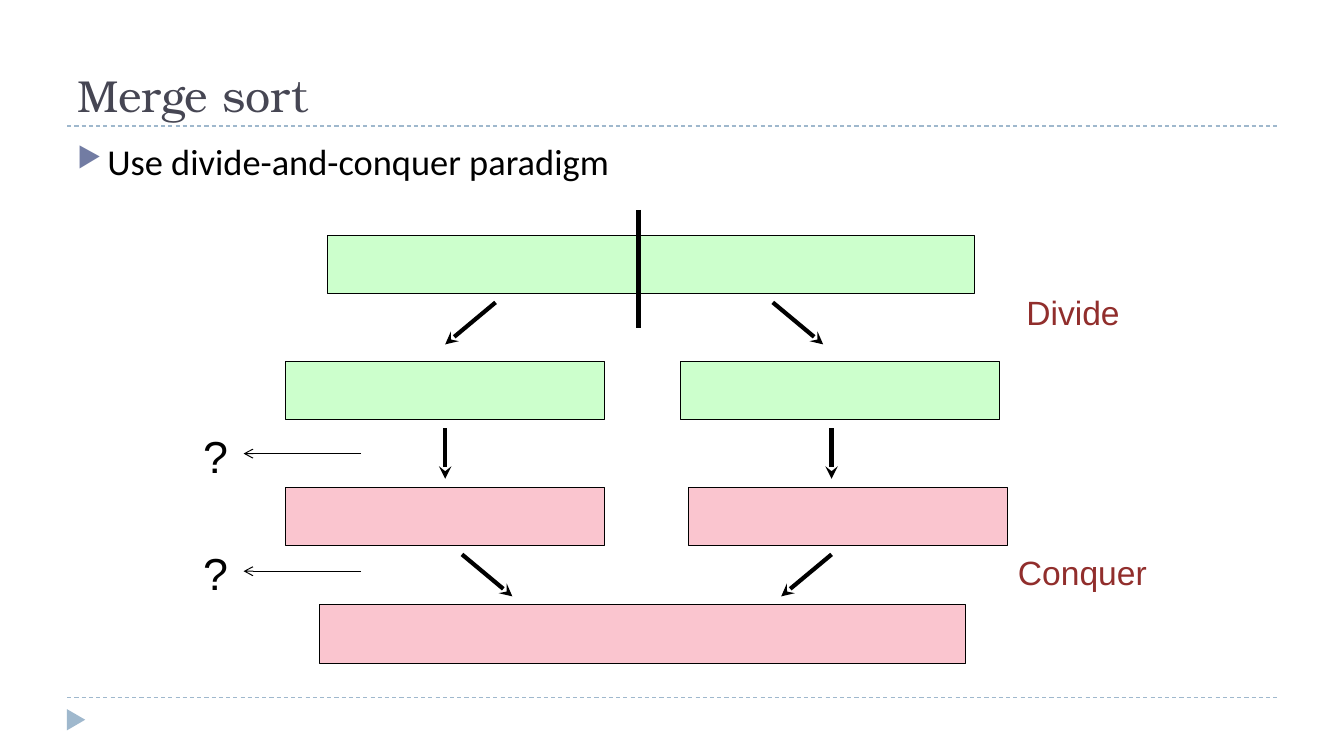
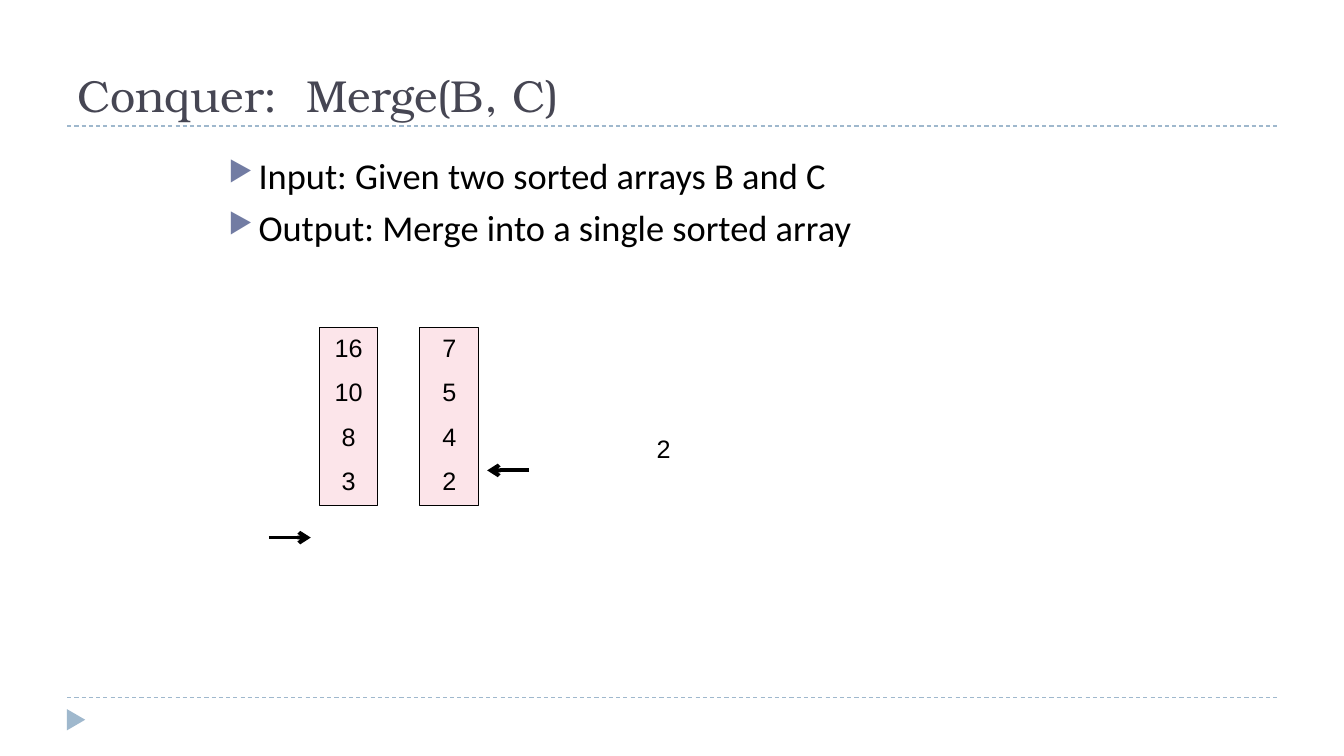
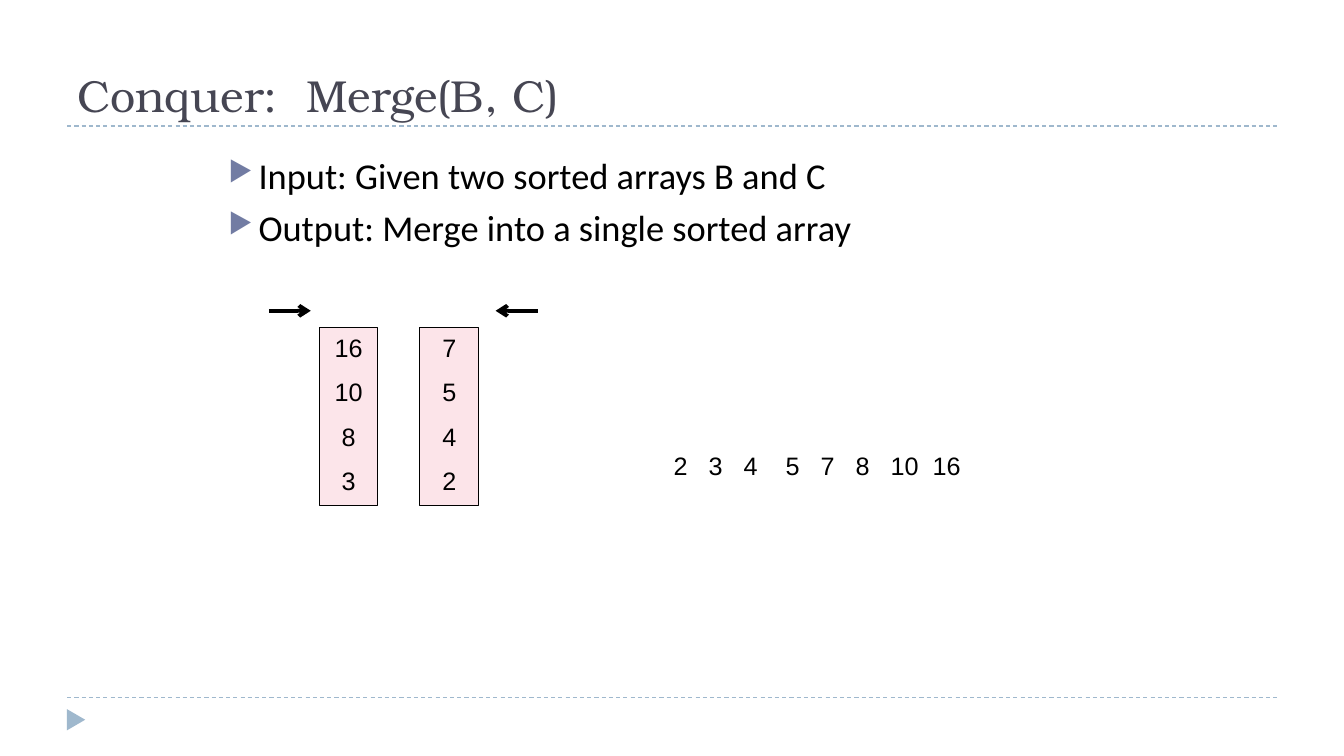
"""Build three slides that explain merge sort."""
import pptx
import pptx.dml.color
import pptx.enum.dml
import pptx.enum.shapes
import pptx.enum.text
import pptx.oxml
import pptx.oxml.ns
import pptx.util

Pt = pptx.util.Pt
RGBColor = pptx.dml.color.RGBColor
MSO_SHAPE = pptx.enum.shapes.MSO_SHAPE
PP_ALIGN = pptx.enum.text.PP_ALIGN
MSO_ANCHOR = pptx.enum.text.MSO_ANCHOR

BLACK = RGBColor(0x00, 0x00, 0x00)
SLATE = RGBColor(0x46, 0x46, 0x53)
RULE_BLUE = RGBColor(0x9F, 0xB8, 0xCD)
BULLET_BLUE = RGBColor(0x72, 0x7C, 0xA3)
GREEN = RGBColor(0xCC, 0xFF, 0xCC)
PINK = RGBColor(0xFA, 0xC5, 0xCF)
DARK_RED = RGBColor(0x91, 0x2E, 0x2C)

TITLE_FONT = {"name": "TeX Gyre Bonum", "size": Pt(32)}
BODY_FONT = {"name": "Calibri", "size": Pt(26)}
STEP_FONT = {"name": "Arial", "size": Pt(24)}
QUESTION_FONT = {"name": "Arial", "size": Pt(32)}
NUMBER_FONT = {"name": "Arial", "size": Pt(18)}

HALF_WIDTH = 228
FULL_WIDTH = 462
BAR_HEIGHT = 42
ARRAY_SIZE = (42, 127.4)
MERGED_STOPS = (25, 50, 80, 105, 130, 155, 185)


def set_values(target, values):
    for name, value in values.items():
        setattr(target, name, value)


def append_xml(parent, tag, attributes="", content=""):
    namespace = pptx.oxml.ns.nsdecls("a")
    parent.append(pptx.oxml.parse_xml(
        f"<a:{tag} {namespace} {attributes}>{content}</a:{tag}>"))


def write_lines(frame, lines, font, color=BLACK, **paragraph_format):
    frame.word_wrap = True
    for index, line in enumerate(lines):
        para = frame.paragraphs[0] if index == 0 else frame.add_paragraph()
        set_values(para, paragraph_format)
        span = para.add_run()
        span.text = line
        set_values(span.font, font)
        span.font.color.rgb = color


def add_text(page, area, lines, font, color=BLACK, **paragraph_format):
    box = page.shapes.add_textbox(*map(Pt, area))
    write_lines(box.text_frame, lines, font, color, **paragraph_format)
    return box


def add_bullets(page, area, lines):
    box = add_text(page, area, lines, BODY_FONT, space_before=Pt(6))
    indent = Pt(21.6)
    for para in box.text_frame.paragraphs:
        properties = para._p.get_or_add_pPr()
        properties.set("marL", str(indent))
        properties.set("indent", str(-indent))
        append_xml(properties, "buClr", content=f'<a:srgbClr val="{BULLET_BLUE}"/>')
        append_xml(properties, "buSzPct", 'val="76000"')
        append_xml(properties, "buChar", 'char="▶"')


def add_shape(page, kind, area, fill, outlined=True):
    shape = page.shapes.add_shape(kind, *map(Pt, area))
    shape.shadow.inherit = False
    shape.fill.solid()
    shape.fill.fore_color.rgb = fill
    if outlined:
        shape.line.color.rgb = BLACK
        shape.line.width = Pt(0.75)
    else:
        shape.line.fill.background()
    return shape


def add_bar(page, left, top, width, fill):
    add_shape(page, MSO_SHAPE.RECTANGLE, (left, top, width, BAR_HEIGHT), fill)


def add_line(page, start, end, width, color=BLACK, head=None, dash=None):
    line = page.shapes.add_connector(
        pptx.enum.shapes.MSO_CONNECTOR.STRAIGHT, *map(Pt, (*start, *end)))
    line.line.color.rgb = color
    set_values(line.line, {"width": Pt(width), "dash_style": dash})
    properties = line.element.spPr
    if head:
        append_xml(properties.find(pptx.oxml.ns.qn("a:ln")), "tailEnd", f'type="{head}"')
    append_xml(properties, "effectLst")


def add_array(page, left, numbers, opacity):
    box = add_shape(page, MSO_SHAPE.RECTANGLE, (left, 234, *ARRAY_SIZE), PINK)
    color = box.element.spPr.find(".//" + pptx.oxml.ns.qn("a:srgbClr"))
    append_xml(color, "alpha", f'val="{opacity * 1000}"')
    box.text_frame.vertical_anchor = MSO_ANCHOR.TOP
    write_lines(box.text_frame, numbers, NUMBER_FONT,
                alignment=PP_ALIGN.CENTER, space_before=Pt(10))


def add_tab_stops(box, stops):
    tabs = "".join(f'<a:tab pos="{Pt(stop)}" algn="l"/>' for stop in stops)
    for para in box.text_frame.paragraphs:
        append_xml(para._p.get_or_add_pPr(), "tabLst", content=tabs)


def add_page(deck, title):
    page = deck.slides.add_slide(deck.slide_layouts[6])
    for y in (498, 90):
        add_line(page, (48, y), (912, y), 0.75, RULE_BLUE,
                 dash=pptx.enum.dml.MSO_LINE.DASH)
    marker = add_shape(page, MSO_SHAPE.ISOSCELES_TRIANGLE,
                       (46.8, 507.6, 15.1, 13), RULE_BLUE, outlined=False)
    marker.rotation = 90
    box = add_text(page, (48, 12, 864, 78), [title], TITLE_FONT, SLATE)
    box.text_frame.vertical_anchor = MSO_ANCHOR.BOTTOM
    return page


def add_overview_page(deck):
    page = add_page(deck, "Merge sort")
    add_bullets(page, (48, 96, 864, 389), ["Use divide-and-conquer paradigm"])
    for left, top, width, fill in (
            (234, 168, FULL_WIDTH, GREEN),
            (204, 258, HALF_WIDTH, GREEN), (486, 258, HALF_WIDTH, GREEN),
            (204, 348, HALF_WIDTH, PINK), (492, 348, HALF_WIDTH, PINK),
            (228, 432, FULL_WIDTH, PINK)):
        add_bar(page, left, top, width, fill)
    add_line(page, (456, 150), (456, 234), 4)
    for start, end in (
            ((354, 216), (318, 246)), ((552, 216), (588, 246)),
            ((318, 306), (318, 342)), ((594, 306), (594, 342)),
            ((330, 396), (366, 426)), ((594, 396), (558, 426))):
        add_line(page, start, end, 3, head="stealth")
    add_text(page, (726, 205, 103, 36), ["Divide"], STEP_FONT, DARK_RED)
    add_text(page, (720, 391, 114, 36), ["Conquer"], STEP_FONT, DARK_RED)
    for y in (324, 408):
        add_line(page, (258, y), (174, y), 0.75, head="arrow")
        add_text(page, (138, y - 21.6, 48, 45), ["?"], QUESTION_FONT)


def add_merge_page(deck, merged, merged_area, left_pointer, right_pointer):
    page = add_page(deck, "Conquer:  Merge(B, C)")
    add_bullets(page, (156, 106, 612, 348), [
        "Input: Given two sorted arrays B and C",
        "Output: Merge into a single sorted array"])
    add_array(page, 228, ("16", "10", "8", "3"), 43)
    add_array(page, 300, ("7", "5", "4", "2"), 45)
    box = add_text(page, merged_area, ["\t".join(merged)], NUMBER_FONT)
    add_tab_stops(box, MERGED_STOPS[:len(merged) - 1])
    for (x, y), length in ((left_pointer, 30), (right_pointer, -30)):
        add_line(page, (x, y), (x + length, y), 2.75, head="arrow")


def main():
    deck = pptx.Presentation()
    set_values(deck, {"slide_width": Pt(960), "slide_height": Pt(540)})
    add_overview_page(deck)
    add_merge_page(deck, ["2"], (462, 306, 42, 29), (192, 384), (378, 336))
    add_merge_page(deck, ["2", "3", "4", "5", "7", "8", "10", "16"],
                   (474, 318, 276, 29), (192, 222), (384, 222))
    deck.save("out.pptx")


if __name__ == "__main__":
    main()
